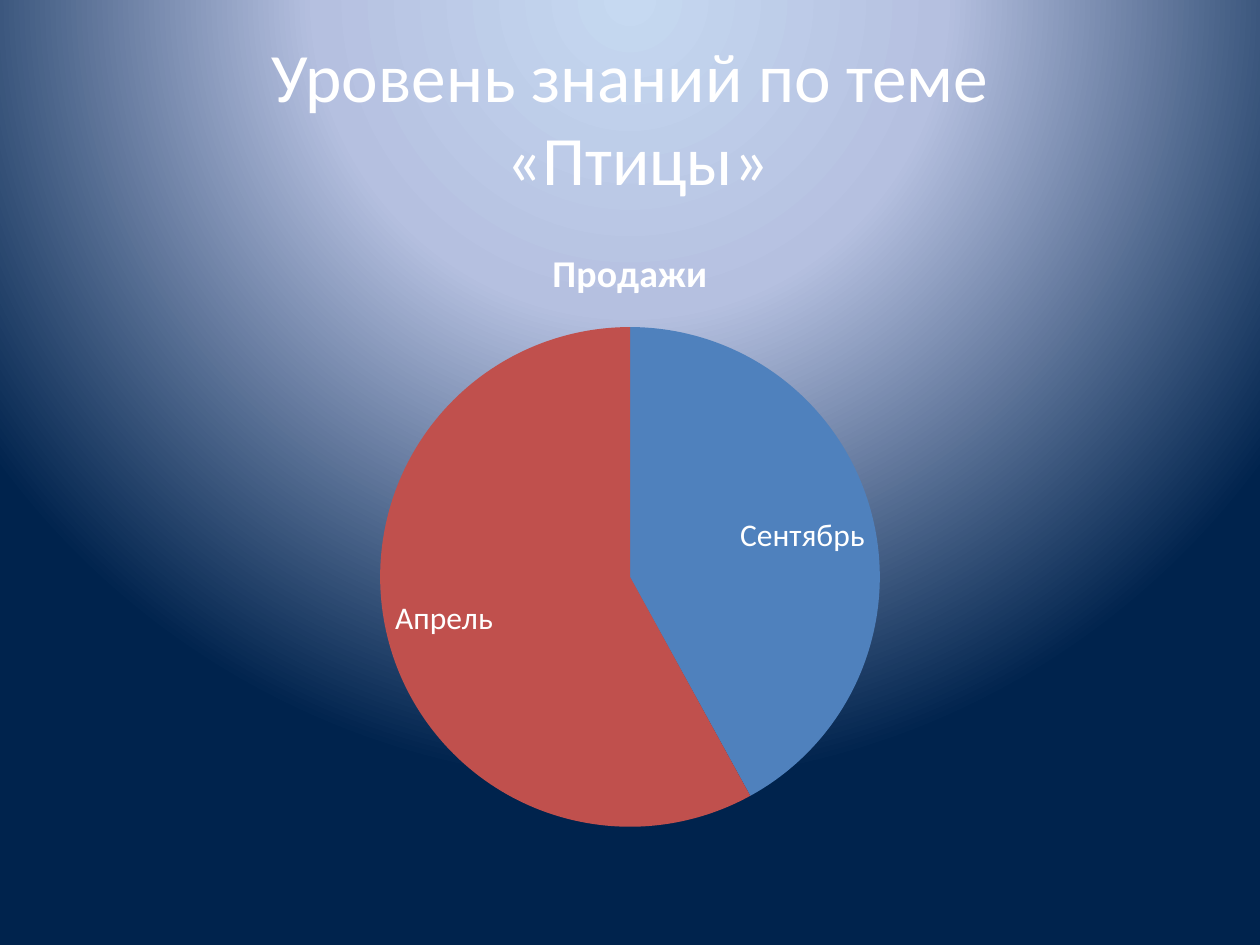
from pptx import Presentation
from pptx.chart.data import CategoryChartData
from pptx.dml.color import RGBColor
from pptx.enum.chart import XL_CHART_TYPE, XL_LABEL_POSITION
from pptx.enum.text import MSO_ANCHOR, PP_ALIGN
from pptx.oxml import parse_xml
from pptx.oxml.ns import nsdecls, qn
from pptx.util import Pt

WHITE = "FFFFFF"


def rgb(color):
    return RGBColor.from_string(color)


def set_font(font, size, bold=False):
    font.name = "Calibri"
    font.size = Pt(size)
    font.bold = bold
    font.color.rgb = rgb(WHITE)


def add_run(p, text, size, bold=False):
    r = p.add_run()
    r.text = text
    set_font(r.font, size, bold)


def set_background(s, stops):
    s.background.fill.gradient()
    old = s.background._cSld.find(".//" + qn("a:gradFill"))
    gs = "".join(
        f'<a:gs pos="{pos * 1000}"><a:srgbClr val="{color}"/></a:gs>'
        for pos, color in stops
    )
    new = parse_xml(
        f'<a:gradFill {nsdecls("a")} rotWithShape="1"><a:gsLst>{gs}</a:gsLst>'
        '<a:path path="circle"><a:fillToRect l="50000" t="-80000" '
        'r="50000" b="180000"/></a:path></a:gradFill>'
    )
    old.getparent().replace(old, new)


def add_title(s, lines):
    sp = s.shapes.title
    sp.left, sp.top, sp.width, sp.height = Pt(36), Pt(21.6), Pt(648), Pt(90)
    tf = sp.text_frame
    tf.word_wrap = True
    tf.vertical_anchor = MSO_ANCHOR.MIDDLE
    p = tf.paragraphs[0]
    p.alignment = PP_ALIGN.CENTER
    for i, line in enumerate(lines):
        if i:
            p.add_line_break()
        add_run(p, line, 39.6)


def add_pie(s, name, slices):
    data = CategoryChartData()
    data.categories = [cat for cat, *_ in slices]
    data.add_series(name, [value for _, value, _ in slices])
    chart = s.shapes.add_chart(
        XL_CHART_TYPE.PIE, Pt(36), Pt(126), Pt(648), Pt(356.4), data
    ).chart
    set_font(chart.font, 18)
    chart.has_legend = False
    chart.has_title = True
    add_run(chart.chart_title.text_frame.paragraphs[0], name, 21.6, True)
    plot = chart.plots[0]
    plot.vary_by_categories = True
    series = plot.series[0]
    for i, (_, _, color) in enumerate(slices):
        fill = series.points[i].format.fill
        fill.solid()
        fill.fore_color.rgb = rgb(color)
    labels = series.data_labels
    labels.show_category_name = True
    labels.show_value = False
    labels.show_percentage = False
    labels.position = XL_LABEL_POSITION.INSIDE_END
    set_font(labels.font, 18)


def main():
    prs = Presentation()
    prs.slide_width, prs.slide_height = Pt(720), Pt(540)
    s = prs.slides.add_slide(prs.slide_layouts[5])
    set_background(s, [(0, "C6D9F1"), (40, "B5C0E0"), (100, "00234D")])
    add_title(s, ["Уровень знаний по теме", " «Птицы»"])
    add_pie(s, "Продажи", [
        ("Сентябрь", 42, "4F81BD"),
        ("Апрель", 58, "C0504D"),
    ])
    prs.save("out.pptx")


if __name__ == "__main__":
    main()
